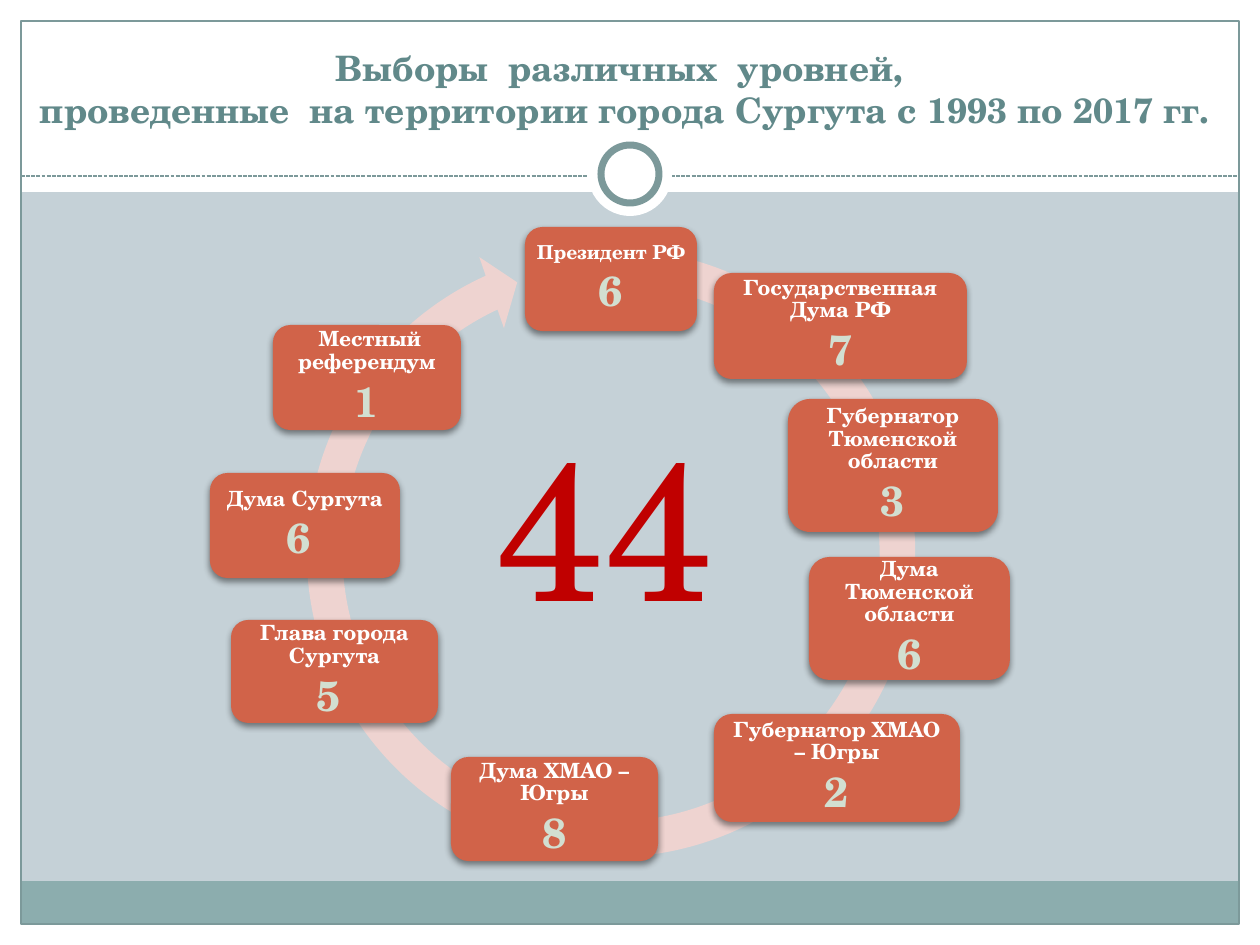
from lxml.etree import SubElement
from pptx import Presentation
from pptx.dml.color import RGBColor
from pptx.enum.dml import MSO_LINE
from pptx.enum.shapes import MSO_CONNECTOR, MSO_SHAPE as SHAPE
from pptx.enum.text import MSO_ANCHOR as ANCHOR, PP_ALIGN as ALIGN
from pptx.oxml.ns import qn
from pptx.util import Pt

EMU_PER_PX = 914400 / 126
FONT = "TeX Gyre Schola"
WHITE = RGBColor(0xFF, 0xFF, 0xFF)
BACKDROP = RGBColor(0xC5, 0xD1, 0xD7)
BAND = RGBColor(0x8C, 0xAD, 0xAE)
RULE = RGBColor(0x7C, 0x99, 0x9A)
HEADING = RGBColor(0x61, 0x89, 0x8A)
HEADING_EDGE = RGBColor(0x5B, 0x66, 0x8F)
CARD = RGBColor(0xD1, 0x63, 0x49)
COUNT = RGBColor(0xD2, 0xDF, 0xD1)
ARROW = RGBColor(0xEE, 0xD3, 0xD0)
TOTAL = RGBColor(0xC0, 0x00, 0x00)
SHADOW = RGBColor(0x00, 0x00, 0x00)

STATIONS = [
    ("Президент РФ", "6", 11, (315, 0, 172, 104)),
    ("Государственная Дума РФ", "7", 12, (504, 46, 253, 106)),
    ("Губернатор Тюменской области", "3", 12, (578, 172, 210, 133)),
    ("Дума Тюменской области", "6", 12, (599, 330, 201, 123)),
    ("Губернатор ХМАО – Югры", "2", 12, (504, 487, 246, 108)),
    ("Дума ХМАО – Югры", "8", 12, (241, 530, 207, 104)),
    ("Глава города Сургута", "5 ", 12, (21, 393, 207, 103)),
    ("Дума Сургута", "6 ", 12, (0, 246, 190, 105)),
    (" Местный референдум", "1", 12, (63, 98, 188, 105)),
]


def px(length):
    return round(length * EMU_PER_PX)


def within(outer, part):
    return outer[0] + part[0], outer[1] + part[1], part[2], part[3]


def add_form(slide, kind, box, fill=None, line=None, weight=0.75):
    form = slide.shapes.add_shape(kind, *map(px, box))
    form.shadow.inherit = False
    if fill is None:
        form.fill.background()
    else:
        form.fill.solid()
        form.fill.fore_color.rgb = fill
    if line is None:
        form.line.fill.background()
    else:
        form.line.color.rgb = line
        form.line.width = Pt(weight)
    return form


def write(paragraph, text, size, color, bold=False, align=ALIGN.CENTER,
          spacing=1.0, after=0, edge=None):
    paragraph.text = text
    paragraph.alignment = align
    paragraph.line_spacing = spacing
    paragraph.space_after = Pt(after)
    for run in paragraph.runs:
        run.font.name = FONT
        run.font.size = Pt(size)
        run.font.bold = bold
        run.font.color.rgb = color
        if edge is not None:
            properties = run.font._element
            outline = SubElement(properties, qn("a:ln"), w=str(Pt(1)))
            fill = SubElement(outline, qn("a:solidFill"))
            SubElement(fill, qn("a:srgbClr"), val=str(edge))
            properties.insert(0, outline)


def add_text_area(slide, box, anchor=ANCHOR.TOP):
    area = slide.shapes.add_textbox(*map(px, box)).text_frame
    area.word_wrap = True
    area.vertical_anchor = anchor
    return area


def cast_shadow(form):
    effects = form._element.spPr.find(qn("a:effectLst"))
    shadow = SubElement(effects, qn("a:outerShdw"), blurRad=str(Pt(4)),
                        dist=str(Pt(2)), dir="5400000", rotWithShape="0")
    color = SubElement(shadow, qn("a:srgbClr"), val=str(SHADOW))
    SubElement(color, qn("a:alpha"), val="45000")


def draw_frame(slide, box):
    left, top, width, height = box
    margin, header = 21, 192
    inner = width - 2 * margin
    for border in [
        (0, height - margin, width, margin),
        (0, 0, width, header),
        (0, 0, margin, height),
        (width - margin, 0, margin, height),
    ]:
        add_form(slide, SHAPE.RECTANGLE, within(box, border), WHITE)
    add_form(slide, SHAPE.RECTANGLE,
             within(box, (margin, height - margin - 43, inner, 43)), BAND)
    add_form(slide, SHAPE.RECTANGLE,
             within(box, (margin, margin, inner, height - 2 * margin)), line=RULE)

    rule_y = px(top + 176)
    rule = slide.shapes.add_connector(
        MSO_CONNECTOR.STRAIGHT, px(left + margin), rule_y,
        px(left + width - margin), rule_y)
    rule.line.color.rgb = RULE
    rule.line.width = Pt(0.75)
    rule.line.dash_style = MSO_LINE.SQUARE_DOT
    SubElement(rule._element.spPr, qn("a:effectLst"))

    for size, line in [(84, None), (58, RULE)]:
        medallion = ((width - size) // 2, 174 - size // 2, size, size)
        add_form(slide, SHAPE.OVAL, within(box, medallion), WHITE, line, 4)


def draw_title(slide, box):
    heading = add_text_area(slide, box, ANCHOR.BOTTOM)
    write(heading.paragraphs[0],
          "Выборы  различных  уровней, \v"
          "проведенные  на территории города Сургута с 1993 по 2017 гг.",
          20, HEADING, bold=True, edge=HEADING_EDGE)


def draw_station(slide, box, label, count, label_size):
    card = add_form(slide, SHAPE.ROUNDED_RECTANGLE, box, CARD)
    cast_shadow(card)
    area = card.text_frame
    area.word_wrap = True
    area.vertical_anchor = ANCHOR.MIDDLE
    area.margin_left = area.margin_right = px(6)
    area.margin_top = area.margin_bottom = px(6)
    write(area.paragraphs[0], label, label_size, WHITE, bold=True,
          spacing=0.9, after=4)
    write(area.add_paragraph(), count, 24, COUNT, bold=True, spacing=0.9)


def draw_cycle(slide, box):
    arrow = add_form(slide, SHAPE.CIRCULAR_ARROW,
                     within(box, (77, 2, 648, 648)), ARROW)
    for index, value in enumerate([0.055, 3.31, 147.22, 168.33, 0.058]):
        arrow.adjustments[index] = value
    for label, count, label_size, place in STATIONS:
        draw_station(slide, within(box, place), label, count, label_size)
    total = add_text_area(slide, within(box, (273, 172, 284, 251)))
    write(total.paragraphs[0], "44", 112, TOTAL, align=ALIGN.LEFT)


def main():
    deck = Presentation()
    deck.slide_width, deck.slide_height = px(1260), px(945)
    slide = deck.slides.add_slide(deck.slide_layouts[6])
    slide.background.fill.solid()
    slide.background.fill.fore_color.rgb = BACKDROP
    draw_frame(slide, (0, 0, 1260, 945))
    draw_title(slide, (21, 21, 1207, 116))
    draw_cycle(slide, (210, 227, 800, 634))
    deck.save("out.pptx")


if __name__ == "__main__":
    main()
